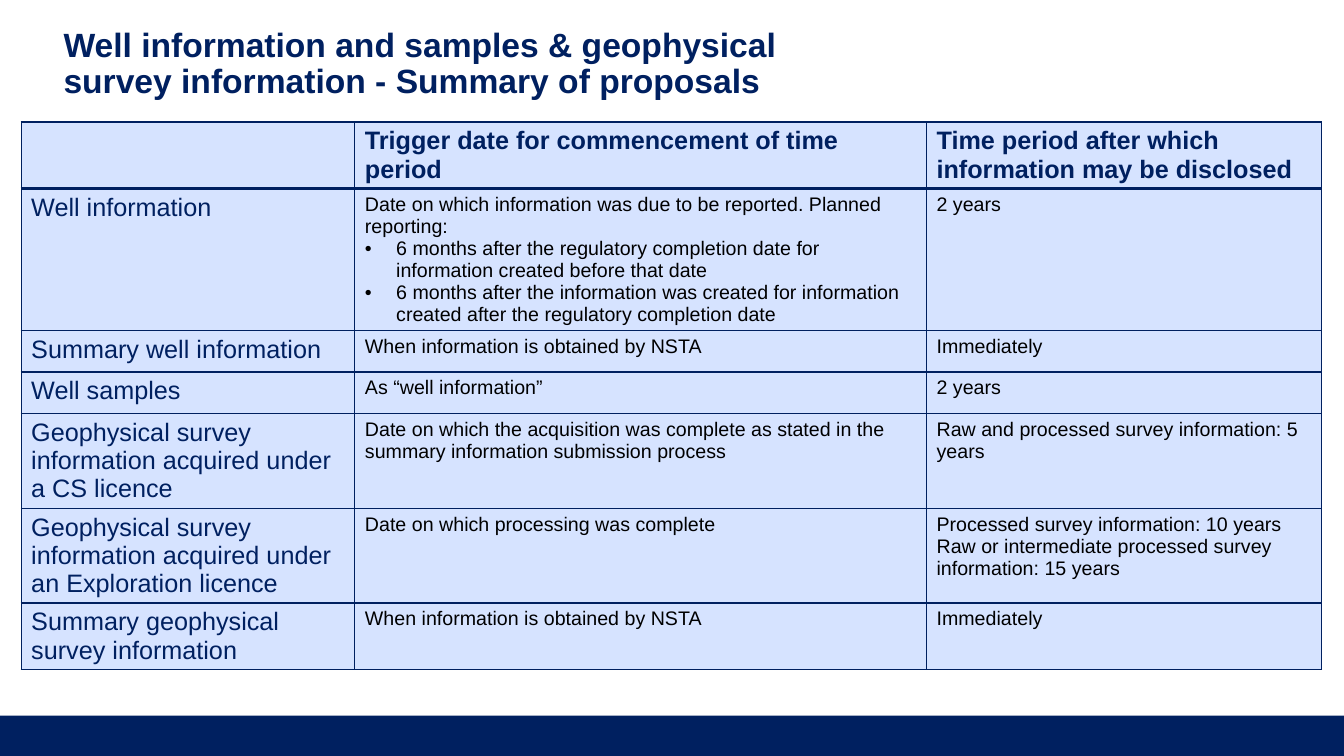
from lxml import etree
from pptx import Presentation
from pptx.dml.color import RGBColor
from pptx.enum.shapes import MSO_SHAPE
from pptx.enum.text import MSO_ANCHOR, MSO_AUTO_SIZE, PP_ALIGN
from pptx.oxml.ns import qn
from pptx.util import Inches, Pt

RECTANGLE = MSO_SHAPE.RECTANGLE
TOP = MSO_ANCHOR.TOP
NO_AUTOFIT = MSO_AUTO_SIZE.NONE
LEFT = PP_ALIGN.LEFT

# Content: each cell is a list of paragraphs; "• " starts a bullet
TITLE = "Well information and samples & geophysical survey information - Summary of proposals"
BULLET = "• "
ROWS = [
    ([], ["Trigger date for commencement of time period"],
     ["Time period after which information may be disclosed"]),
    (["Well information"],
     ["Date on which information was due to be reported. Planned reporting:",
      "• 6 months after the regulatory completion date for information created before that date",
      "• 6 months after the information was created for information created after "
      "the regulatory completion date"],
     ["2 years"]),
    (["Summary well information"], ["When information is obtained by NSTA"], ["Immediately"]),
    (["Well samples"], ["As “well information”"], ["2 years"]),
    (["Geophysical survey information acquired under a CS licence"],
     ["Date on which the acquisition was complete as stated in the summary information "
      "submission process"],
     ["Raw and processed survey information: 5 years"]),
    (["Geophysical survey information acquired under an Exploration licence"],
     ["Date on which processing was complete"],
     ["Processed survey information: 10 years",
      "Raw or intermediate processed survey information: 15 years"]),
    (["Summary geophysical survey information"],
     ["When information is obtained by NSTA"], ["Immediately"]),
]

# Layout and style
SLIDE_WIDTH, SLIDE_HEIGHT, BAND_HEIGHT = 13.33, 7.5, 0.4
COLUMN_WIDTHS = [3.31, 5.67, 3.92]
ROW_HEIGHTS = [0.66, 1.41, 0.41, 0.41, 0.94, 0.94, 0.66]
FONT, NAVY, PALE_BLUE, BLACK = "Arial", "002060", "D6E3FF", "000000"


def color(value):
    return RGBColor.from_string(value)


def format_font(font, size, text_color, bold):
    font.name = FONT
    font.size = Pt(size)
    font.bold = bold
    font.color.rgb = color(text_color)


def add_bullet(paragraph):
    properties = paragraph._p.get_or_add_pPr()
    properties.set("marL", str(Inches(0.31)))
    properties.set("indent", str(-Inches(0.31)))
    etree.SubElement(properties, qn("a:buFont")).set("typeface", FONT)
    etree.SubElement(properties, qn("a:buChar")).set("char", BULLET.strip())


def set_borders(cell, widths):
    properties = cell._tc.get_or_add_tcPr()
    for side, width in widths.items():
        line = etree.SubElement(properties, qn("a:ln" + side), w=str(Pt(width)))
        fill = etree.SubElement(line, qn("a:solidFill"))
        etree.SubElement(fill, qn("a:srgbClr")).set("val", NAVY)


def fill_cell(cell, lines, row, column):
    is_header = row == 0
    set_borders(cell, {"L": 1, "R": 1, "T": 3 if row == 1 else 1, "B": 3 if is_header else 1})
    cell.fill.solid()
    cell.fill.fore_color.rgb = color(PALE_BLUE)
    size, text_color = (18, NAVY) if is_header or column == 0 else (14, BLACK)
    cell.text_frame.text = "\n".join(line.removeprefix(BULLET) for line in lines)
    for paragraph, line in zip(cell.text_frame.paragraphs, lines):
        if line.startswith(BULLET):
            add_bullet(paragraph)
        for run in paragraph.runs:
            format_font(run.font, size, text_color, is_header)


presentation = Presentation()
presentation.slide_width = Inches(SLIDE_WIDTH)
presentation.slide_height = Inches(SLIDE_HEIGHT)
slide = presentation.slides.add_slide(presentation.slide_layouts[5])

# Bottom band
band = slide.shapes.add_shape(RECTANGLE, 0, Inches(SLIDE_HEIGHT - BAND_HEIGHT),
                              Inches(SLIDE_WIDTH), Inches(BAND_HEIGHT))
band.shadow.inherit = False
band.fill.solid()
band.fill.fore_color.rgb = color(NAVY)
band.line.fill.background()

# Title
title = slide.shapes.title
title.left, title.top = Inches(0.63), Inches(0.28)
title.width, title.height = Inches(7.7), Inches(0.55)
frame = title.text_frame
frame.text = TITLE
frame.word_wrap = True
frame.auto_size = NO_AUTOFIT
frame.vertical_anchor = TOP
frame.margin_left = frame.margin_top = 0
heading = frame.paragraphs[0]
heading.alignment = LEFT
heading.line_spacing = 0.9
format_font(heading.runs[0].font, 24, NAVY, True)

# Proposals table
table = slide.shapes.add_table(len(ROWS), len(COLUMN_WIDTHS), Inches(0.21), Inches(1.21),
                               Inches(sum(COLUMN_WIDTHS)), Inches(sum(ROW_HEIGHTS))).table
table.horz_banding = False
for table_column, width in zip(table.columns, COLUMN_WIDTHS):
    table_column.width = Inches(width)
for table_row, height in zip(table.rows, ROW_HEIGHTS):
    table_row.height = Inches(height)
for row, cells in enumerate(ROWS):
    for column, lines in enumerate(cells):
        fill_cell(table.cell(row, column), lines, row, column)

presentation.save("out.pptx")
